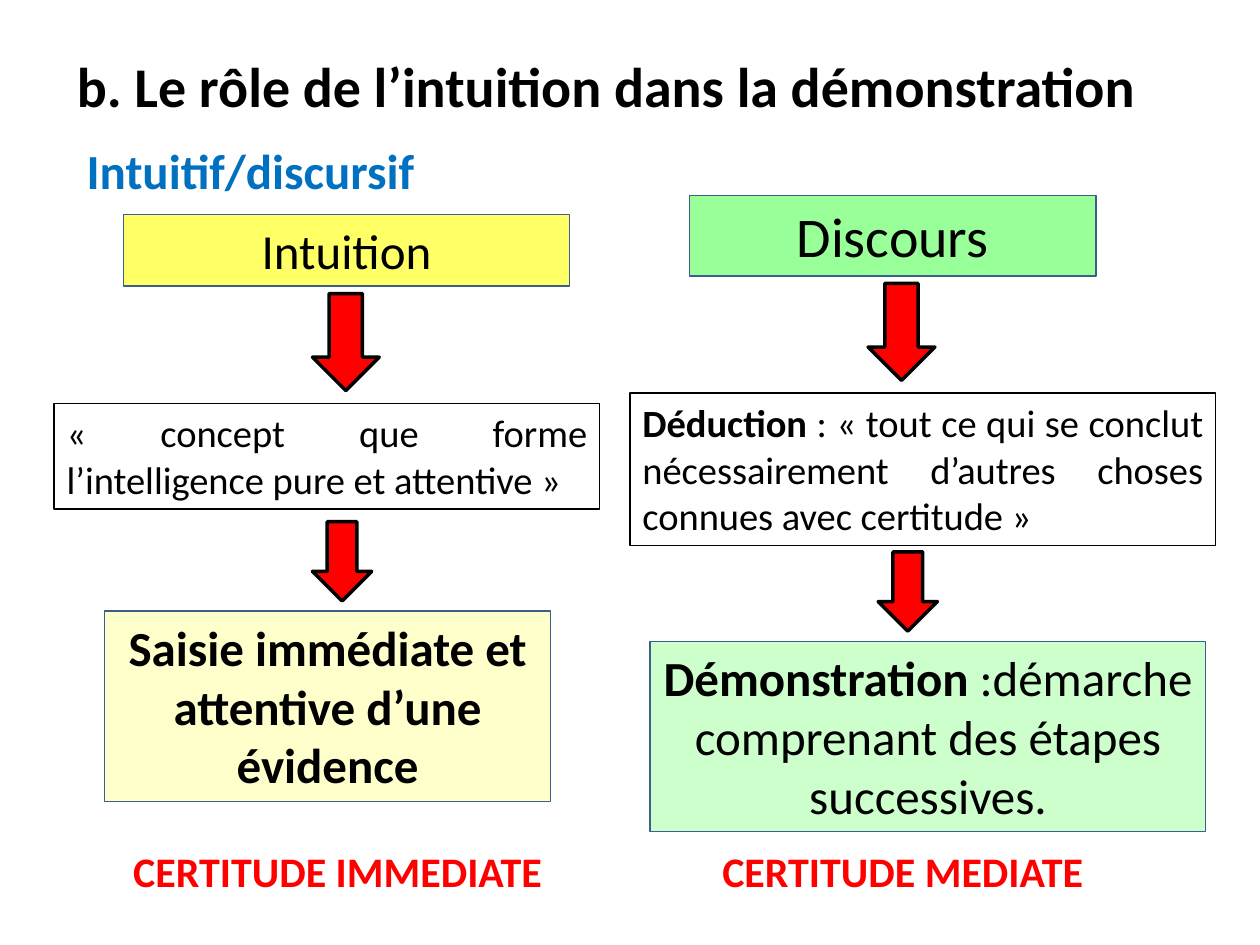
from dataclasses import dataclass
from typing import NamedTuple, Optional

from pptx import Presentation
from pptx.dml.color import RGBColor
from pptx.enum import shapes, text
from pptx.util import Inches, Pt

# Grid: 100 columns by 75 rows, each cell 0.1 inch square
CELL = Inches(0.1)
COLUMNS, ROWS = 100, 75

FONT = "Calibri"
BLACK = RGBColor(0x00, 0x00, 0x00)
RED = RGBColor(0xFF, 0x00, 0x00)
BLUE = RGBColor(0x00, 0x70, 0xC0)
STEEL = RGBColor(0x3A, 0x5F, 0x8C)
YELLOW = RGBColor(0xFF, 0xFF, 0x66)
PALE_YELLOW = RGBColor(0xFF, 0xFF, 0xCC)
GREEN = RGBColor(0x99, 0xFF, 0x99)
PALE_GREEN = RGBColor(0xCC, 0xFF, 0xCC)

LEFT = text.PP_ALIGN.LEFT
CENTER = text.PP_ALIGN.CENTER
JUSTIFY = text.PP_ALIGN.JUSTIFY


class Area(NamedTuple):
    column: float
    row: float
    width: float
    height: float

    def lengths(self) -> list[int]:
        return [round(cells * CELL) for cells in self]


@dataclass
class Label:
    """Text with an optional bold lead before the rest."""
    area: Area
    size: int
    rest: str = ""
    lead: str = ""
    align: text.PP_ALIGN = CENTER
    color: RGBColor = BLACK
    fill: Optional[RGBColor] = None
    line: Optional[RGBColor] = None


@dataclass
class Arrow:
    area: Area


def write(box, label: Label) -> None:
    frame = box.text_frame
    frame.word_wrap = True
    frame.auto_size = text.MSO_AUTO_SIZE.NONE
    frame.vertical_anchor = text.MSO_ANCHOR.TOP
    para = frame.paragraphs[0]
    para.alignment = label.align
    para.space_before = Pt(0)
    para.font.name = FONT
    para.font.size = Pt(label.size)
    para.font.color.rgb = label.color
    for words, bold in ((label.lead, True), (label.rest, False)):
        if words:
            span = para.add_run()
            span.text = words
            span.font.bold = bold


def draw_shape(page, kind: shapes.MSO_SHAPE, area: Area,
               fill: Optional[RGBColor], line: RGBColor, weight: float):
    shape = page.shapes.add_shape(kind, *area.lengths())
    shape.shadow.inherit = False
    if fill is None:
        shape.fill.background()
    else:
        shape.fill.solid()
        shape.fill.fore_color.rgb = fill
    shape.line.color.rgb = line
    shape.line.width = Pt(weight)
    return shape


def draw_label(page, label: Label) -> None:
    if label.line is None:
        box = page.shapes.add_textbox(*label.area.lengths())
    else:
        box = draw_shape(page, shapes.MSO_SHAPE.RECTANGLE, label.area,
                         label.fill, label.line, 0.75)
    write(box, label)


def draw_arrow(page, arrow: Arrow) -> None:
    draw_shape(page, shapes.MSO_SHAPE.DOWN_ARROW, arrow.area, RED, BLACK, 2)


def draw_title(page, label: Label) -> None:
    title = page.shapes.title
    title.left, title.top, title.width, title.height = label.area.lengths()
    write(title, label)


TITLE = Label(Area(5.1, 3.6, 89.8, 6.4), 32, align=JUSTIFY,
              lead="b. Le rôle de l’intuition dans la démonstration")
SUBTITLE = Label(Area(5.9, 10.7, 48, 5.7), 28, lead="Intuitif/discursif",
                 align=LEFT, color=BLUE)

# Each flow: heading, arrow, definition, arrow, outcome, certainty
INTUITION = [
    Label(Area(9.8, 17, 35.4, 5.7), 28, "Intuition", fill=YELLOW, line=STEEL),
    Arrow(Area(24.8, 23.3, 5.3, 7.7)),
    Label(Area(4.3, 32, 43.3, 8.4), 22,
          "« concept que forme l’intelligence pure et attentive »",
          align=JUSTIFY, line=BLACK),
    Arrow(Area(24.8, 41.4, 4.7, 6.3)),
    Label(Area(8.3, 48.5, 35.4, 15.1), 28,
          lead="Saisie immédiate et attentive d’une évidence",
          fill=PALE_YELLOW, line=STEEL),
    Label(Area(7.5, 66.6, 38.6, 5), 24, lead="CERTITUDE IMMEDIATE", color=RED),
]
DISCOURSE = [
    Label(Area(54.7, 15.5, 32.3, 6.4), 32, "Discours", fill=GREEN, line=STEEL),
    Arrow(Area(68.9, 22.5, 5.3, 7.7)),
    Label(Area(50, 31.2, 46.5, 12.1), 22,
          " : « tout ce qui se conclut nécessairement d’autres choses "
          "connues avec certitude »",
          lead="Déduction", align=JUSTIFY, line=BLACK),
    Arrow(Area(69.7, 43.8, 4.7, 6.3)),
    Label(Area(51.6, 50.9, 44.1, 15.1), 28,
          ":démarche comprenant des étapes successives.",
          lead="Démonstration ", fill=PALE_GREEN, line=STEEL),
    Label(Area(55.5, 66.6, 32.3, 5), 24, lead="CERTITUDE MEDIATE", color=RED),
]


def main() -> None:
    deck = Presentation()
    deck.slide_width, deck.slide_height = COLUMNS * CELL, ROWS * CELL
    page = deck.slides.add_slide(deck.slide_layouts.get_by_name("Title Only"))

    # Headings
    draw_title(page, TITLE)
    draw_label(page, SUBTITLE)

    # Two parallel flows
    for part in INTUITION + DISCOURSE:
        if isinstance(part, Arrow):
            draw_arrow(page, part)
        else:
            draw_label(page, part)

    deck.save("out.pptx")


if __name__ == "__main__":
    main()
